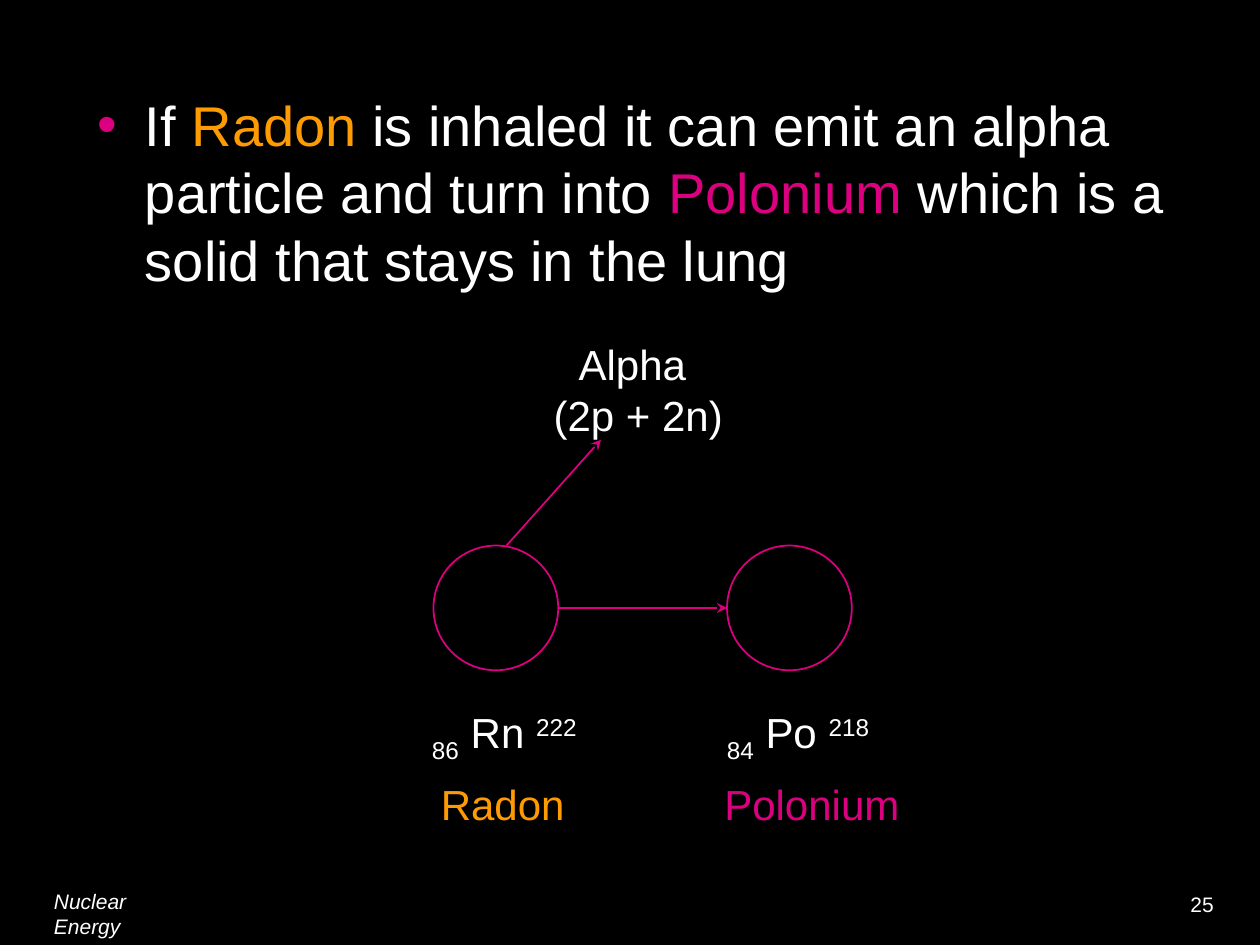
import pptx
import pptx.util
import pptx.dml.color
import pptx.enum.shapes
import pptx.enum.text
import pptx.oxml
import pptx.oxml.ns
from pptx.util import Inches

THEME = {
    "font": "Arial", "background": "000000", "text": "FFFFFF",
    "radon": "FE9B03", "accent": "DC0081",
    "body": 32, "label": 24, "footer": 12, "line": 1,
}

# Content: runs are (text, colour key, baseline percent)
STATEMENT = [
    ("If ", "text", 0), ("Radon", "radon", 0),
    (" is inhaled it can emit an alpha particle and turn into ", "text", 0),
    ("Polonium", "accent", 0),
    (" which is a solid that stays in the lung", "text", 0),
]
# number, symbol, mass, name, name colour, circle left, nuclide box, name box
NUCLIDES = [
    ("86", "Rn", "222", "Radon", "radon", 3.44, (3.33, 1.62), (3.4, 1.19)),
    ("84", "Po", "218", "Polonium", "accent", 5.77, (5.67, 1.6), (5.65, 1.59)),
]
ALPHA = ["Alpha ", "(2p + 2n)"]
FOOTER, PAGE = "Nuclear Energy", "25"

DIAMETER, CIRCLE_TOP = 0.99, 4.33
NUCLIDE_TOP, NAME_TOP, LABEL_HEIGHT = 5.56, 6.13, 0.5


def rgb(key):
    return pptx.dml.color.RGBColor.from_string(THEME[key])


def add_runs(paragraph, runs, size, italic=False):
    for text, colour, baseline in runs:
        run = paragraph.add_run()
        run.text = text
        run.font.name = THEME["font"]
        run.font.size = pptx.util.Pt(THEME[size])
        run.font.color.rgb = rgb(colour)
        if italic:
            run.font.italic = True
        if baseline:
            run._r.get_or_add_rPr().set("baseline", str(baseline * 1000))


def add_label(slide, box, lines, size, wrap=False, centred=False, italic=False):
    frame = slide.shapes.add_textbox(*map(Inches, box)).text_frame
    frame.word_wrap = wrap
    for index, runs in enumerate(lines):
        paragraph = frame.add_paragraph() if index else frame.paragraphs[0]
        if centred:
            paragraph.alignment = pptx.enum.text.PP_ALIGN.CENTER
        add_runs(paragraph, runs, size, italic)


def add_arrow(slide, start, end):
    arrow = slide.shapes.add_connector(
        pptx.enum.shapes.MSO_CONNECTOR.STRAIGHT, *map(Inches, start + end))
    arrow.line.color.rgb = rgb("accent")
    arrow.line.width = pptx.util.Pt(THEME["line"])
    head = pptx.oxml.parse_xml(
        f'<a:tailEnd {pptx.oxml.ns.nsdecls("a")} type="stealth"/>')
    arrow.line._get_or_add_ln().append(head)
    arrow._element.spPr.append(
        pptx.oxml.parse_xml(f'<a:effectLst {pptx.oxml.ns.nsdecls("a")}/>'))


def add_statement(slide):
    body = slide.placeholders[1]
    body.left, body.top, body.width, body.height = map(
        Inches, (0.67, 0.67, 8.67, 1.83))
    paragraph = body.text_frame.paragraphs[0]
    add_runs(paragraph, STATEMENT, "body")
    properties = paragraph._p.get_or_add_pPr()
    properties.set("marL", str(Inches(0.38)))
    properties.set("indent", str(-Inches(0.38)))
    namespace = pptx.oxml.ns.nsdecls("a")
    for xml in (
        f'<a:spcBef {namespace}><a:spcPct val="20000"/></a:spcBef>',
        f'<a:buClr {namespace}><a:srgbClr val="{THEME["accent"]}"/></a:buClr>',
        f'<a:buFont {namespace} typeface="{THEME["font"]}"/>',
        f'<a:buChar {namespace} char="•"/>',
    ):
        properties.append(pptx.oxml.parse_xml(xml))


def add_nuclide(slide, number, symbol, mass, name, colour, left, nuclide, label):
    circle = slide.shapes.add_shape(
        pptx.enum.shapes.MSO_SHAPE.OVAL,
        *map(Inches, (left, CIRCLE_TOP, DIAMETER, DIAMETER)))
    circle.shadow.inherit = False
    circle.fill.background()
    circle.line.color.rgb = rgb("accent")
    circle.line.width = pptx.util.Pt(THEME["line"])
    notation = [(number, "text", -25), (f" {symbol} ", "text", 0), (mass, "text", 30)]
    add_label(slide, (nuclide[0], NUCLIDE_TOP, nuclide[1], LABEL_HEIGHT),
              [notation], "label")
    add_label(slide, (label[0], NAME_TOP, label[1], LABEL_HEIGHT),
              [[(name, colour, 0)]], "label")


def main():
    deck = pptx.Presentation()
    deck.slide_width, deck.slide_height = Inches(10), Inches(7.5)
    slide = deck.slides.add_slide(deck.slide_layouts[1])
    slide.background.fill.solid()
    slide.background.fill.fore_color.rgb = rgb("background")
    title = slide.shapes.title._element
    title.getparent().remove(title)

    # Page number and footer
    add_label(slide, (9.35, 7.03, 0.4, 0.3), [[(PAGE, "text", 0)]], "footer")
    add_label(slide, (0.33, 7, 1.15, 0.5), [[(FOOTER, "text", 0)]], "footer",
              wrap=True, italic=True)

    add_statement(slide)

    # Decay diagram
    for nuclide in NUCLIDES:
        add_nuclide(slide, *nuclide)
    middle = CIRCLE_TOP + DIAMETER / 2
    radon_left, polonium_left = (nuclide[5] for nuclide in NUCLIDES)
    add_arrow(slide, (radon_left + DIAMETER, middle), (polonium_left, middle))
    add_arrow(slide, (4.02, CIRCLE_TOP), (4.77, 3.49))
    add_label(slide, (4.29, 2.64, 1.55, 0.9),
              [[(line, "text", 0)] for line in ALPHA], "label", centred=True)

    deck.save("out.pptx")


if __name__ == "__main__":
    main()
